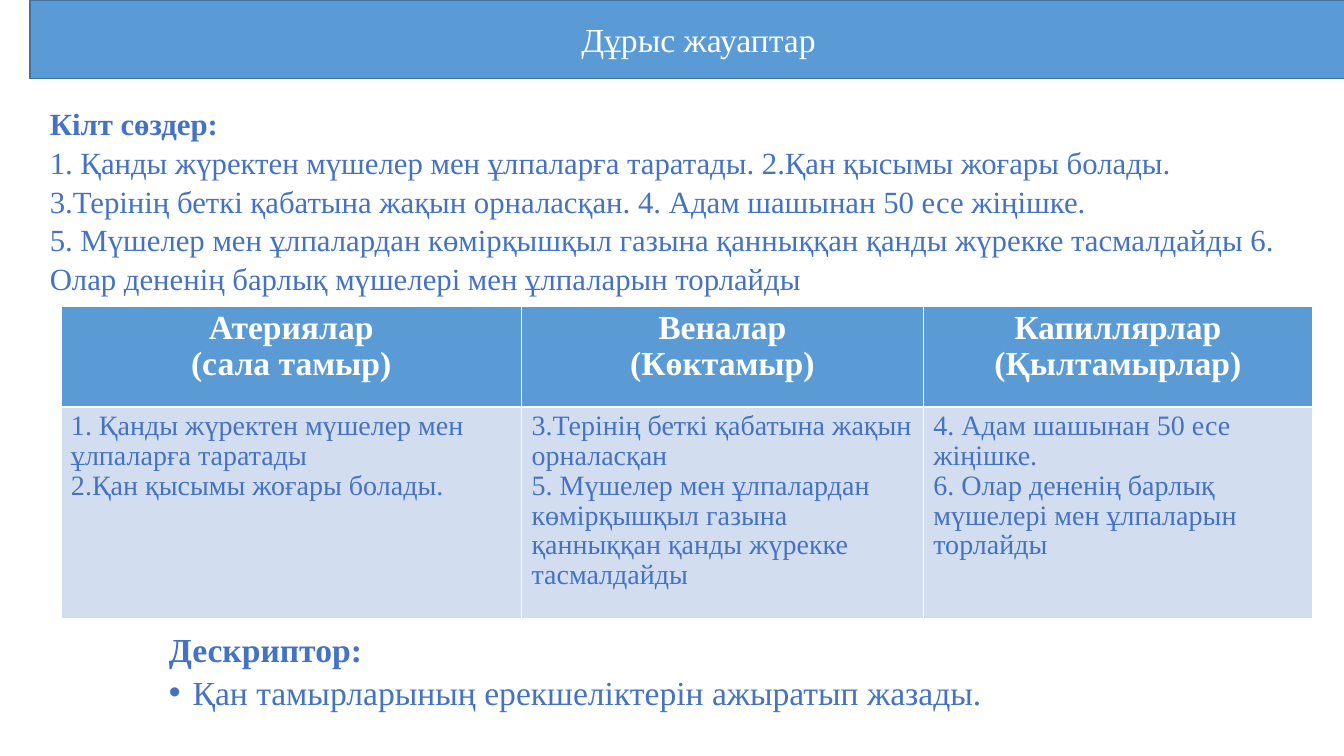
from dataclasses import dataclass

from lxml.etree import SubElement
from pptx import Presentation
from pptx.dml.color import RGBColor as RGB
from pptx.enum.shapes import MSO_SHAPE as Preset
from pptx.enum.text import MSO_ANCHOR as Anchor, PP_ALIGN as Align
from pptx.oxml.ns import qn
from pptx.util import Pt


@dataclass(frozen=True)
class Theme:
    font: str = "Times New Roman"
    accent: str = "5B9BD5"
    outline: str = "41719C"
    ink: str = "4472C4"
    pale: str = "D2DEEF"
    white: str = "FFFFFF"
    heading: int = 24
    keywords: int = 22
    cell: int = 20
    text_spacing: float = 1.05
    table_spacing: float = 0.96
    thin: float = 0.45
    thick: float = 1.47


class SlideBuilder:
    def __init__(self, slide, theme):
        self.shapes = slide.shapes
        self.theme = theme

    def fill_text(self, frame, lines, size, color, bold=False, align=Align.LEFT, spacing=1.0):
        """Fill the frame with one paragraph per line and return the paragraphs."""
        frame.word_wrap = True
        paragraphs = []
        for index, line in enumerate(lines):
            paragraph = frame.add_paragraph() if index else frame.paragraphs[0]
            paragraph.text = line
            paragraph.alignment = align
            paragraph.line_spacing = spacing
            self.style(paragraph, size, color, bold)
            paragraphs.append(paragraph)
        return paragraphs

    def style(self, paragraph, size, color, bold):
        font = paragraph.font
        font.name, font.size, font.bold = self.theme.font, Pt(size), bold
        font.color.rgb = RGB.from_string(color)

    def banner(self, box, title):
        theme = self.theme
        bar = self.shapes.add_shape(Preset.RECTANGLE, *map(Pt, box))
        bar.shadow.inherit = False
        bar.fill.solid()
        bar.fill.fore_color.rgb = RGB.from_string(theme.accent)
        bar.line.color.rgb = RGB.from_string(theme.outline)
        bar.line.width = Pt(1)
        bar.text_frame.vertical_anchor = Anchor.MIDDLE
        self.fill_text(bar.text_frame, [title], theme.heading, theme.white, align=Align.CENTER)

    def titled_text(self, box, title, lines, size, bulleted=False):
        theme = self.theme
        frame = self.shapes.add_textbox(*map(Pt, box)).text_frame
        heading, *body = self.fill_text(frame, [title, *lines], size, theme.ink,
                                        spacing=theme.text_spacing)
        heading.font.bold = True
        if bulleted:
            for paragraph in body:
                self.bullet(paragraph)

    def bullet(self, paragraph, indent=17):
        properties = paragraph._p.get_or_add_pPr()
        properties.set("marL", str(Pt(indent)))
        properties.set("indent", str(-Pt(indent)))
        font_defaults = properties.find(qn("a:defRPr"))
        properties.remove(font_defaults)
        SubElement(properties, qn("a:buFont"), typeface="Arial")
        SubElement(properties, qn("a:buChar"), char="•")
        properties.append(font_defaults)

    def table(self, position, widths, heights, rows):
        theme = self.theme
        grid = self.shapes.add_table(len(rows), len(widths), *map(Pt, position),
                                     Pt(sum(widths)), Pt(sum(heights))).table
        for column, width in zip(grid.columns, widths):
            column.width = Pt(width)
        for r, (height, row) in enumerate(zip(heights, rows)):
            grid.rows[r].height = Pt(height)
            header = r == 0
            for c, lines in enumerate(row):
                cell = grid.cell(r, c)
                self.borders(cell, header)
                cell.fill.solid()
                cell.fill.fore_color.rgb = RGB.from_string(theme.accent if header else theme.pale)
                self.fill_text(cell.text_frame, lines,
                               theme.heading if header else theme.cell,
                               theme.white if header else theme.ink,
                               bold=header, align=Align.CENTER if header else Align.LEFT,
                               spacing=theme.table_spacing)

    def borders(self, cell, header):
        """Draw white borders, thick where the header meets the body."""
        theme = self.theme
        thick_side = "B" if header else "T"
        properties = cell._tc.get_or_add_tcPr()
        for side in "LRTB":
            width = theme.thick if side == thick_side else theme.thin
            edge = SubElement(properties, qn(f"a:ln{side}"), w=str(Pt(width)))
            SubElement(SubElement(edge, qn("a:solidFill")), qn("a:srgbClr"), val=theme.white)


KEYWORDS = [
    "1. Қанды жүректен мүшелер мен ұлпаларға таратады. 2.Қан қысымы жоғары болады. "
    "3.Терінің беткі қабатына жақын орналасқан. 4. Адам шашынан 50 есе жіңішке.",
    "5. Мүшелер мен ұлпалардан көмірқышқыл газына қанныққан қанды жүрекке тасмалдайды "
    "6. Олар дененің барлық мүшелері мен ұлпаларын торлайды",
]
VESSELS = [
    [["Атериялар", "(сала тамыр)"],
     ["Веналар", "(Көктамыр)"],
     ["Капиллярлар (Қылтамырлар)"]],
    [["1. Қанды жүректен мүшелер мен ұлпаларға таратады",
      "2.Қан қысымы жоғары болады."],
     ["3.Терінің беткі қабатына жақын орналасқан",
      "5. Мүшелер мен ұлпалардан көмірқышқыл газына қанныққан қанды жүрекке тасмалдайды"],
     ["4. Адам шашынан 50 есе жіңішке.",
      "6. Олар дененің барлық мүшелері мен ұлпаларын торлайды"]],
]


def main():
    deck = Presentation()
    deck.slide_width, deck.slide_height = Pt(960), Pt(540)
    theme = Theme()
    answers = SlideBuilder(deck.slides.add_slide(deck.slide_layouts[6]), theme)
    answers.banner((21.5, 0, 955, 56), "Дұрыс жауаптар")
    answers.table((43.5, 218.5), (329, 287, 278), (72, 151), VESSELS)
    answers.titled_text((28.5, 70, 900, 140), "Кілт сөздер:", KEYWORDS, theme.keywords)
    answers.titled_text((113.5, 444.5, 685, 65), "Дескриптор:",
                        ["Қан тамырларының ерекшеліктерін ажыратып жазады."],
                        theme.heading, bulleted=True)
    deck.save("out.pptx")


if __name__ == "__main__":
    main()
